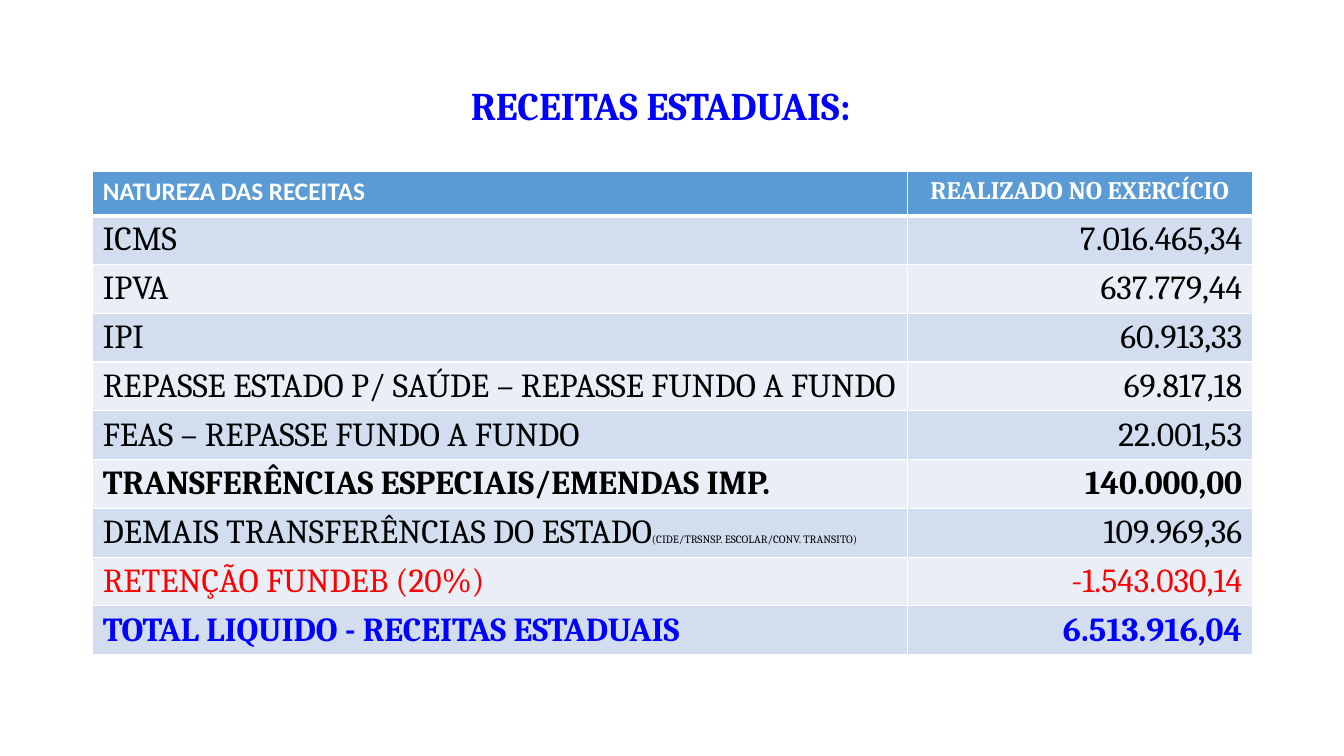
from pptx import Presentation
from pptx.dml.color import RGBColor
from pptx.enum.text import MSO_ANCHOR as Anchor, PP_ALIGN as Align
from pptx.oxml import parse_xml
from pptx.oxml.ns import nsdecls
from pptx.util import Inches, Pt

BLACK, WHITE, RED, BLUE = "000000", "FFFFFF", "FF0000", "0000FF"
HEADER_FILL = "5B9BD5"
BAND_FILLS = ["D2DEEF", "EAEFF7"]

HEADERS = [("NATUREZA DAS RECEITAS", "Calibri", Align.LEFT),
           ("REALIZADO NO EXERCÍCIO", "Cambria", Align.CENTER)]
REVENUES = [
    ("ICMS", "7.016.465,34", {}),
    ("IPVA", "637.779,44", {}),
    ("IPI", "60.913,33", {}),
    ("REPASSE ESTADO P/ SAÚDE – REPASSE FUNDO A FUNDO", "69.817,18", {}),
    ("FEAS – REPASSE FUNDO A FUNDO", "22.001,53", {}),
    ("TRANSFERÊNCIAS ESPECIAIS/EMENDAS IMP.", "140.000,00", {"bold": True}),
    ("DEMAIS TRANSFERÊNCIAS DO ESTADO", "109.969,36", {}),
    ("RETENÇÃO FUNDEB (20%)", "-1.543.030,14", {"color": RED}),
    ("TOTAL LIQUIDO - RECEITAS ESTADUAIS", "6.513.916,04",
     {"color": BLUE, "bold": True}),
]
SMALL_NOTES = {
    "DEMAIS TRANSFERÊNCIAS DO ESTADO": "(CIDE/TRSNSP. ESCOLAR/CONV. TRANSITO)",
}


def rgb(color):
    return RGBColor.from_string(color)


class RevenueSlide:
    base_format = {"name": "Cambria", "size": 24, "bold": False, "color": BLACK}

    def __init__(self, presentation):
        self.slide = presentation.slides.add_slide(presentation.slide_layouts[5])

    def add_run(self, paragraph, text, **changes):
        values = {**self.base_format, **changes}
        run = paragraph.add_run()
        run.text = text
        run.font.color.rgb = rgb(values.pop("color"))
        values["size"] = Pt(values["size"])
        for attribute, value in values.items():
            setattr(run.font, attribute, value)

    def add_title(self, text, left, top, width, height):
        title = self.slide.shapes.title
        bounds = {"left": left, "top": top, "width": width, "height": height}
        for attribute, value in bounds.items():
            setattr(title, attribute, Inches(value))
        title.text_frame.vertical_anchor = Anchor.MIDDLE
        title.text_frame.word_wrap = True
        paragraph = title.text_frame.paragraphs[0]
        paragraph.alignment = Align.CENTER
        paragraph.line_spacing = 0.9
        self.add_run(paragraph, text, size=28, bold=True, color=BLUE)
        self.add_run(paragraph, "\t", name="Calibri", size=44)

    def add_table(self, left, top, column_widths, row_heights):
        frame = self.slide.shapes.add_table(
            len(row_heights), len(column_widths), Inches(left), Inches(top),
            Inches(sum(column_widths)), Inches(sum(row_heights)))
        table = frame.table
        for column, width in zip(table.columns, column_widths):
            column.width = Inches(width)
        for row, height in zip(table.rows, row_heights):
            row.height = Inches(height)
        return table

    def add_borders(self, cell, widths):
        properties = cell._tc.get_or_add_tcPr()
        for side, width in widths.items():
            properties.append(parse_xml(
                f'<a:ln{side} {nsdecls("a")} w="{Pt(width)}"><a:solidFill>'
                f'<a:srgbClr val="{WHITE}"/></a:solidFill></a:ln{side}>'))

    def fill_cell(self, cell, text, fill, alignment, top_line=1, bottom_line=1,
                  **changes):
        self.add_borders(cell, {"L": 1, "R": 1, "T": top_line, "B": bottom_line})
        cell.fill.solid()
        cell.fill.fore_color.rgb = rgb(fill)
        paragraph = cell.text_frame.paragraphs[0]
        paragraph.alignment = alignment
        self.add_run(paragraph, text, **changes)
        if text in SMALL_NOTES:
            self.add_run(paragraph, SMALL_NOTES[text], size=8)


def main():
    presentation = Presentation()
    presentation.slide_width = Inches(13.33)
    presentation.slide_height = Inches(7.5)

    page = RevenueSlide(presentation)
    page.add_title("RECEITAS ESTADUAIS:", 0.92, 0.47, 11.5, 1.05)
    table = page.add_table(0.92, 1.7, [8.08, 3.42],
                           [0.44] + [0.48] * len(REVENUES))

    for column, (text, font, alignment) in enumerate(HEADERS):
        page.fill_cell(table.cell(0, column), text, HEADER_FILL, alignment,
                       bottom_line=3, name=font, size=18, bold=True, color=WHITE)
    for row, (label, amount, changes) in enumerate(REVENUES, start=1):
        fill = BAND_FILLS[(row - 1) % 2]
        top_line = 3 if row == 1 else 1
        for column, (text, alignment) in enumerate(
                [(label, Align.LEFT), (amount, Align.RIGHT)]):
            page.fill_cell(table.cell(row, column), text, fill, alignment,
                           top_line=top_line, **changes)

    presentation.save("out.pptx")


if __name__ == "__main__":
    main()
